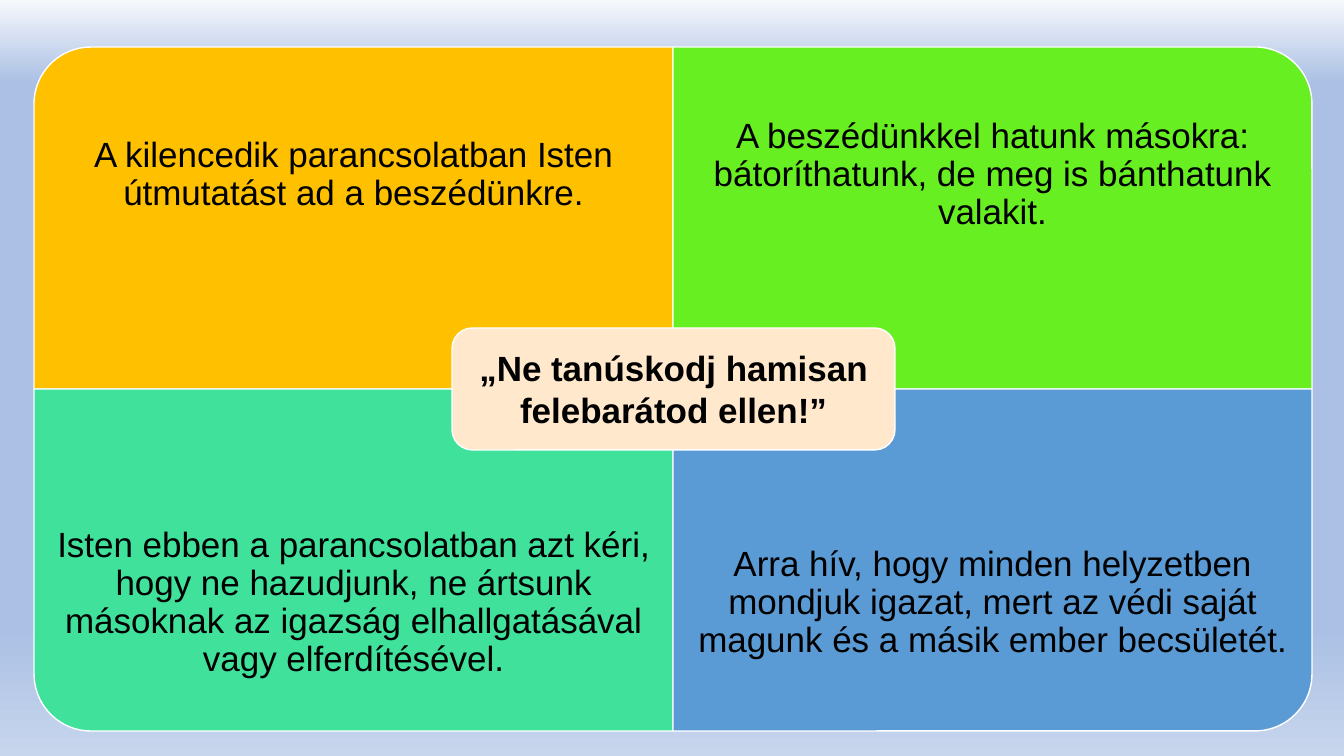
from copy import deepcopy
from pptx import Presentation
from pptx.dml.color import RGBColor
from pptx.enum.shapes import MSO_SHAPE as Shape
from pptx.enum.text import MSO_ANCHOR as Anchor, PP_ALIGN as Align
from pptx.util import Pt

PX = 914400 / 100.8
LEFT, TOP, WIDE, HIGH = 34, 47, 639, 342
TEXT_H = 256

BLACK = RGBColor(0x00, 0x00, 0x00)
WHITE = RGBColor(0xFF, 0xFF, 0xFF)
AMBER = RGBColor(0xFF, 0xC0, 0x00)
LIME = RGBColor(0x67, 0xEF, 0x21)
MINT = RGBColor(0x3F, 0xE1, 0x9B)
BLUE = RGBColor(0x5B, 0x9B, 0xD5)
CREAM = RGBColor(0xFF, 0xE8, 0xCC)
PALE = RGBColor(0xF6, 0xF8, 0xFC)
HAZE = RGBColor(0xAB, 0xC0, 0xE4)
MIST = RGBColor(0xC7, 0xD5, 0xED)


def add_panel(kind, x, y, w, h, color):
    panel = slide.shapes.add_shape(kind, *[round(n * PX) for n in (x, y, w, h)])
    panel.shadow.inherit = False
    panel.fill.solid()
    panel.fill.fore_color.rgb = color
    panel.line.color.rgb = WHITE
    panel.line.width = Pt(1)
    return panel


def set_text(shape, text, inset, spacing, bold):
    frame = shape.text_frame
    frame.word_wrap = True
    frame.vertical_anchor = Anchor.MIDDLE
    frame.margin_left = frame.margin_right = round(inset * PX)
    frame.margin_top = frame.margin_bottom = round(inset * PX)
    frame.text = text
    for para in frame.paragraphs:
        para.alignment = Align.CENTER
        para.line_spacing = spacing
        for run in para.runs:
            run.font.name = "Arial"
            run.font.size = Pt(25)
            run.font.bold = bold
            run.font.color.rgb = BLACK


deck = Presentation()
deck.slide_width = round(1344 * PX)
deck.slide_height = round(756 * PX)
slide = deck.slides.add_slide(deck.slide_layouts[6])

# Background gradient, top to bottom
fill = slide.background.fill
fill.gradient()
fill.gradient_angle = 270
stops = fill._fill._gradFill.gsLst
for _ in range(2):
    stops.append(deepcopy(stops[0]))
for stop, place, color in zip(fill.gradient_stops, (0, 0.11, 0.83, 1),
                              (PALE, HAZE, HAZE, MIST)):
    stop.position = place
    stop.color.rgb = color

# Four quarters: column, row, turn, colour, text
quarters = [
    (0, 0, 270, AMBER, "A kilencedik parancsolatban Isten útmutatást ad a beszédünkre."),
    (1, 0, 0, LIME, "A beszédünkkel hatunk másokra: bátoríthatunk, "
                    "de meg is bánthatunk valakit."),
    (0, 1, 180, MINT, "Isten ebben a parancsolatban azt kéri, hogy ne hazudjunk, "
                      "ne ártsunk másoknak az igazság elhallgatásával "
                      "vagy elferdítésével."),
    (1, 1, 90, BLUE, "Arra hív, hogy minden helyzetben mondjuk igazat, mert az védi "
                     "saját magunk és a másik ember becsületét."),
]
for col, row, turn, color, text in quarters:
    x, y = LEFT + col * WIDE, TOP + row * HIGH
    # A quarter turn swaps the sides around the same centre
    w, h = (HIGH, WIDE) if turn % 180 else (WIDE, HIGH)
    panel = add_panel(Shape.ROUND_1_RECTANGLE, x + (WIDE - w) / 2,
                      y + (HIGH - h) / 2, w, h, color)
    panel.rotation = turn
    text_y = y + row * (HIGH - TEXT_H)
    box = slide.shapes.add_textbox(*[round(n * PX) for n in (x, text_y, WIDE, TEXT_H)])
    set_text(box, text, 19, 0.9, False)

# Commandment in the middle
center = add_panel(Shape.ROUNDED_RECTANGLE, 452, 328, 443, 122, CREAM)
set_text(center, "„Ne tanúskodj hamisan\nfelebarátod ellen!”", 16, 1.0, True)

deck.save("out.pptx")
